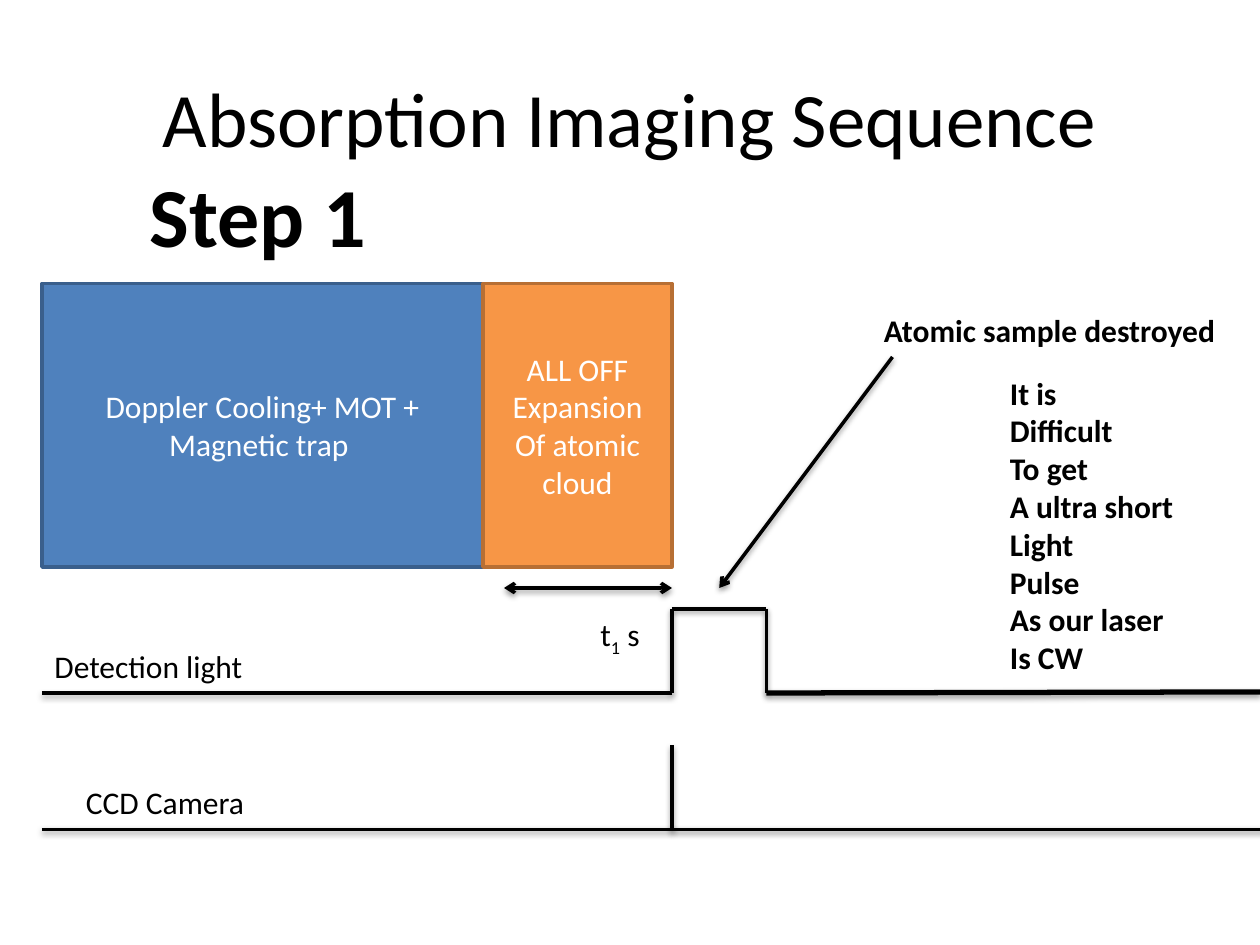
import pptx
import pptx.util
import pptx.dml.color
import pptx.enum.shapes
import pptx.enum.text
import pptx.oxml
import pptx.oxml.ns

PX = 7620  # EMU per px, 120 px to the inch

THEME = {
    "font": "Calibri",
    "black": "000000", "white": "FFFFFF",
    "blue": "4F81BD", "blue_edge": "3A5F8C",
    "orange": "F79646", "orange_edge": "B76F34",
    "title": 44, "step": 48, "body": 18,
    "line": 2, "thick": 3,
}

# Corners shared by the timing diagram
LEFT, TRAP_END, PULSE_START, PULSE_END, RIGHT = 40, 460, 640, 730, 1240
PHASE_TOP, PHASE_HEIGHT = 270, 270
LIGHT_HIGH, LIGHT_LOW = 580, 660
CAMERA_HIGH, CAMERA_LOW = 710, 790

TITLE = ("Absorption Imaging Sequence", (60, 36, 1080, 150))

PHASES = [  # paragraphs, left, right, fill, edge
    (["Doppler Cooling+ MOT + Magnetic trap "], LEFT, TRAP_END, "blue", "blue_edge"),
    (["ALL OFF", "Expansion", "Of atomic cloud"], TRAP_END, PULSE_START, "orange", "orange_edge"),
]

LABELS = [  # paragraphs, box, size, bold
    (["Detection light"], (40, 610, 205, 48), "body", False),
    (["Atomic sample destroyed"], (830, 290, 342, 48), "body", True),
    (["CCD Camera"], (70, 740, 176, 48), "body", False),
    (["Step 1"], (131, 150, 233, 109), "step", True),
    (["It is", "Difficult", "To get", "A ultra short", "Light", "Pulse",
      "As our laser", "Is CW"], (950, 350, 181, 302), "body", True),
]
DELAY_BOX = (560, 580, 64, 48)
DELAY_RUNS = [("t", False), ("1", True), (" s", False)]  # text, subscript

TRACES = [  # points, line width
    ([(LEFT, LIGHT_LOW), (PULSE_START, LIGHT_LOW), (PULSE_START, LIGHT_HIGH),
      (PULSE_END, LIGHT_HIGH), (PULSE_END, LIGHT_LOW)], "line"),
    ([(PULSE_END, LIGHT_LOW), (1200, 659)], "thick"),
    ([(LEFT, CAMERA_LOW), (PULSE_START, CAMERA_LOW), (PULSE_START, CAMERA_HIGH)], "line"),
    ([(PULSE_START, CAMERA_LOW), (RIGHT, CAMERA_LOW)], "line"),
]
ARROWS = [  # start, end, ends that carry a head
    ((480, 560), (PULSE_START, 560), ("headEnd", "tailEnd")),
    ((850, 340), (685, 560), ("tailEnd",)),
]

SHADOW = (
    '<a:effectLst %s><a:outerShdw blurRad="40000" dist="20000" dir="5400000" '
    'rotWithShape="0"><a:srgbClr val="000000"><a:alpha val="38000"/></a:srgbClr>'
    '</a:outerShdw></a:effectLst>' % pptx.oxml.ns.nsdecls("a")
)


def emu(values):
    return [pptx.util.Emu(value * PX) for value in values]


def rgb(name):
    return pptx.dml.color.RGBColor.from_string(THEME[name])


def style(paragraph, size, color="black", bold=False, centred=False):
    paragraph.font.name = THEME["font"]
    paragraph.font.size = pptx.util.Pt(THEME[size])
    paragraph.font.color.rgb = rgb(color)
    paragraph.font.bold = bold
    if centred:
        paragraph.alignment = pptx.enum.text.PP_ALIGN.CENTER


def write(frame, texts, size, **look):
    for index, text in enumerate(texts):
        paragraph = frame.add_paragraph() if index else frame.paragraphs[0]
        paragraph.text = text
        style(paragraph, size, **look)


def add_text_box(slide, box, wrap=False):
    frame = slide.shapes.add_textbox(*emu(box)).text_frame
    frame.word_wrap = wrap
    return frame


def add_line(slide, start, end, width="line", heads=()):
    connector = slide.shapes.add_connector(
        pptx.enum.shapes.MSO_CONNECTOR.STRAIGHT, *emu(start + end))
    connector.line.color.rgb = rgb("black")
    connector.line.width = pptx.util.Pt(THEME[width])
    properties = connector._element.spPr
    outline = properties.find(pptx.oxml.ns.qn("a:ln"))
    for head in heads:
        outline.append(pptx.oxml.parse_xml(
            '<a:%s %s type="arrow"/>' % (head, pptx.oxml.ns.nsdecls("a"))))
    properties.append(pptx.oxml.parse_xml(SHADOW))


def add_phase(slide, texts, left, right, fill, edge):
    shape = slide.shapes.add_shape(
        pptx.enum.shapes.MSO_SHAPE.RECTANGLE,
        *emu((left, PHASE_TOP, right - left, PHASE_HEIGHT)))
    shape.shadow.inherit = False
    shape.fill.solid()
    shape.fill.fore_color.rgb = rgb(fill)
    shape.line.color.rgb = rgb(edge)
    shape.line.width = pptx.util.Pt(THEME["line"])
    shape.text_frame.word_wrap = True
    shape.text_frame.vertical_anchor = pptx.enum.text.MSO_ANCHOR.MIDDLE
    write(shape.text_frame, texts, "body", color="white", centred=True)


def main():
    presentation = pptx.Presentation()
    presentation.slide_width, presentation.slide_height = emu((1200, 900))
    slide = presentation.slides.add_slide(presentation.slide_layouts[6])

    title, box = TITLE
    frame = add_text_box(slide, box, wrap=True)
    frame.vertical_anchor = pptx.enum.text.MSO_ANCHOR.MIDDLE
    write(frame, [title], "title", centred=True)

    for phase in PHASES:
        add_phase(slide, *phase)
    for points, width in TRACES:
        for start, end in zip(points, points[1:]):
            add_line(slide, start, end, width)
    for start, end, heads in ARROWS:
        add_line(slide, start, end, heads=heads)
    for texts, box, size, bold in LABELS:
        write(add_text_box(slide, box), texts, size, bold=bold)

    paragraph = add_text_box(slide, DELAY_BOX).paragraphs[0]
    style(paragraph, "body")
    for text, subscript in DELAY_RUNS:
        run = paragraph.add_run()
        run.text = text
        if subscript:
            run.font._element.set("baseline", "-25000")

    presentation.save("out.pptx")


if __name__ == "__main__":
    main()
